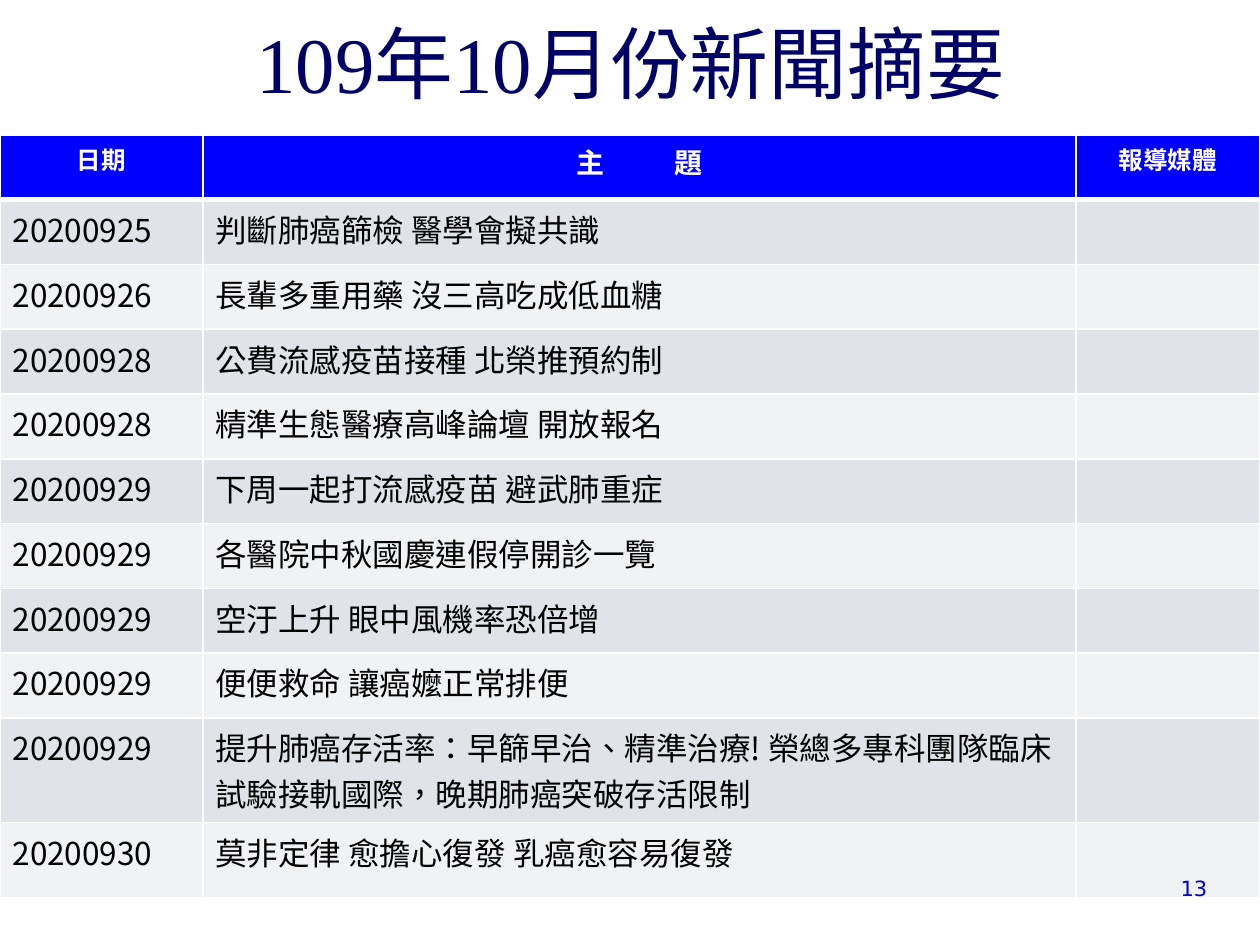
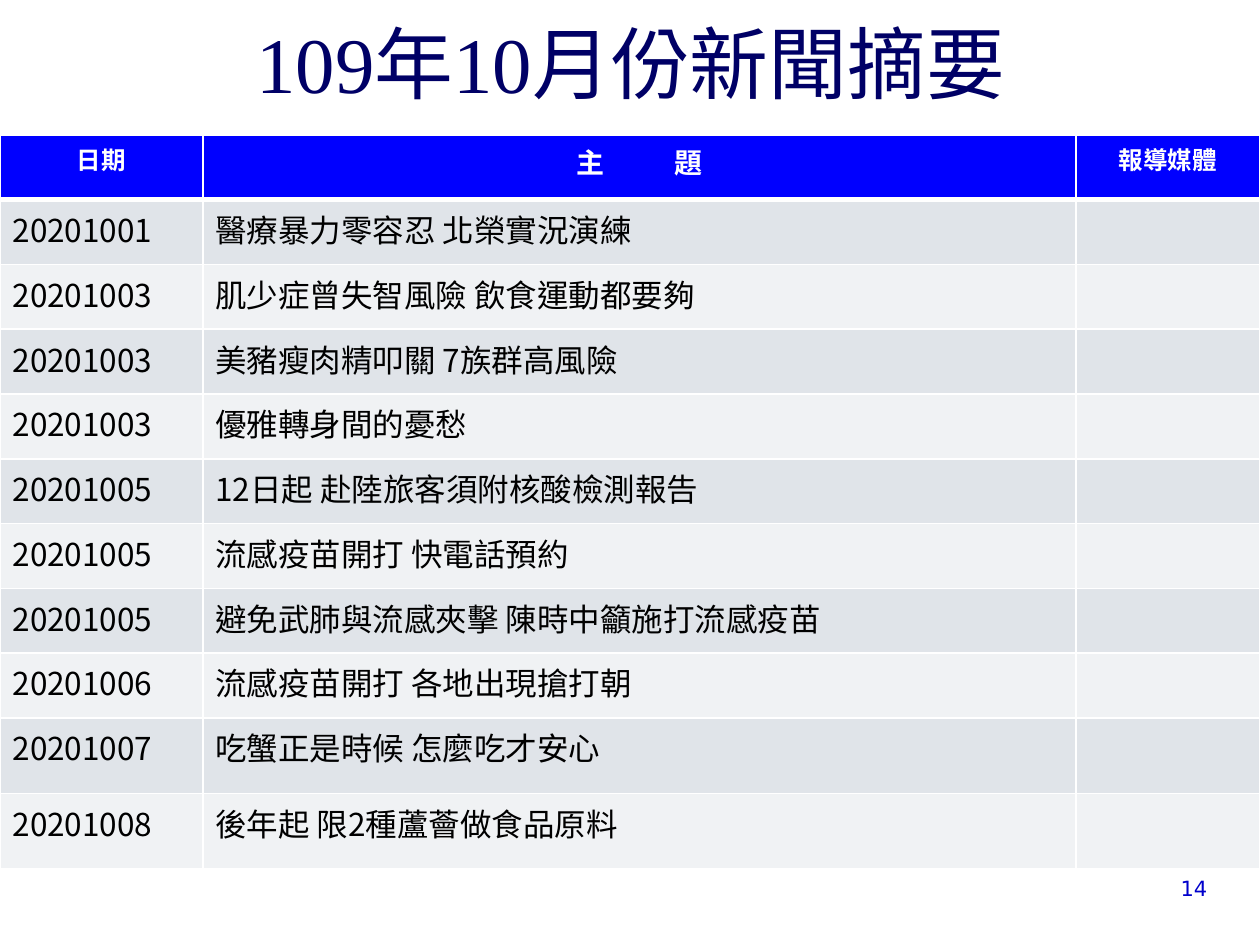
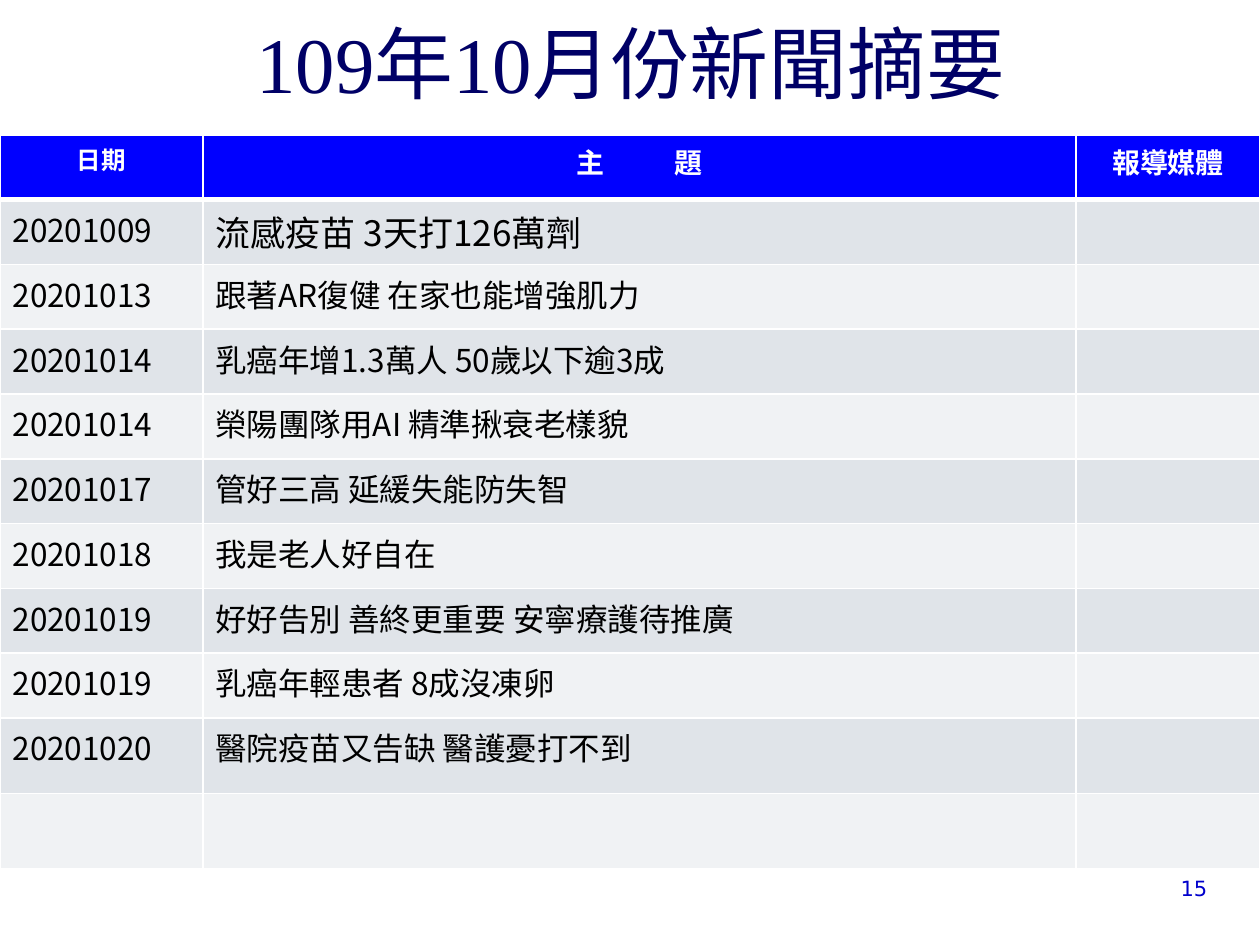
from lxml import etree
from pptx import Presentation
from pptx.dml.color import RGBColor
from pptx.enum.text import MSO_ANCHOR, PP_ALIGN
from pptx.oxml.ns import qn
from pptx.util import Inches, Pt

CENTER, LEFT, RIGHT = PP_ALIGN.CENTER, PP_ALIGN.LEFT, PP_ALIGN.RIGHT
BOTTOM, TOP = MSO_ANCHOR.BOTTOM, MSO_ANCHOR.TOP

COLORS = {
    "title": "000066",
    "header": "0000FF",
    "header_text": "FFFFFF",
    "band_dark": "E0E4E9",
    "band_light": "F0F2F4",
    "border": "FFFFFF",
    "text": "000000",
    "page_number": "0000CC",
}
TITLE_FONT = "Times New Roman"
TABLE_FONT = "Noto Sans CJK SC"
NUMBER_FONT = "DejaVu Sans"
LANGUAGE = "zh-TW"

TITLE = "109年10月份新聞摘要"
TITLE_BOX = (0.63, 0.34, 8.75, 0.58)
TABLE_BOX = (0, 1.07, 10, 5.83)
NUMBER_BOX = (8.94, 6.9, 0.74, 0.3)
COLUMN_WIDTHS = (1.61, 6.93, 1.46)
TALL_ROWS, TALL_HEIGHT = 2, 0.6
LINE_CAPACITY, TWO_LINE_HEIGHT = 26, 0.83
FIRST_PAGE = 13

# Each page: size of the media heading, size of the first headline, news items
PAGES = [
    (14, 18, [
        ("20200925", "判斷肺癌篩檢 醫學會擬共識"),
        ("20200926", "長輩多重用藥 沒三高吃成低血糖"),
        ("20200928", "公費流感疫苗接種 北榮推預約制"),
        ("20200928", "精準生態醫療高峰論壇 開放報名"),
        ("20200929", "下周一起打流感疫苗 避武肺重症"),
        ("20200929", "各醫院中秋國慶連假停開診一覽"),
        ("20200929", "空汙上升 眼中風機率恐倍增"),
        ("20200929", "便便救命 讓癌嬤正常排便"),
        ("20200929", "提升肺癌存活率：早篩早治、精準治療! "
                     "榮總多專科團隊臨床試驗接軌國際，晚期肺癌突破存活限制"),
        ("20200930", "莫非定律 愈擔心復發 乳癌愈容易復發"),
    ]),
    (14, 18, [
        ("20201001", "醫療暴力零容忍 北榮實況演練"),
        ("20201003", "肌少症曾失智風險 飲食運動都要夠"),
        ("20201003", "美豬瘦肉精叩關 7族群高風險"),
        ("20201003", "優雅轉身間的憂愁"),
        ("20201005", "12日起 赴陸旅客須附核酸檢測報告"),
        ("20201005", "流感疫苗開打 快電話預約"),
        ("20201005", "避免武肺與流感夾擊 陳時中籲施打流感疫苗"),
        ("20201006", "流感疫苗開打 各地出現搶打朝"),
        ("20201007", "吃蟹正是時候 怎麼吃才安心"),
        ("20201008", "後年起 限2種蘆薈做食品原料"),
    ]),
    (16, 20, [
        ("20201009", "流感疫苗 3天打126萬劑"),
        ("20201013", "跟著AR復健 在家也能增強肌力"),
        ("20201014", "乳癌年增1.3萬人 50歲以下逾3成"),
        ("20201014", "榮陽團隊用AI 精準揪衰老樣貌"),
        ("20201017", "管好三高 延緩失能防失智"),
        ("20201018", "我是老人好自在"),
        ("20201019", "好好告別 善終更重要 安寧療護待推廣"),
        ("20201019", "乳癌年輕患者 8成沒凍卵"),
        ("20201020", "醫院疫苗又告缺 醫護憂打不到"),
        ("", ""),
    ]),
]


def style_paragraph(paragraph, size, font_name, color, align=LEFT, bold=False):
    paragraph.alignment = align
    font = paragraph.font
    font.size, font.name, font.bold = Pt(size), font_name, bold
    font.color.rgb = RGBColor.from_string(COLORS[color])
    for run in paragraph.runs:
        run.font._element.set("lang", LANGUAGE)


def add_line(slide, box, text, size, font_name, color, align, anchor):
    """Place one line of text in a box."""
    frame = slide.shapes.add_textbox(*map(Inches, box)).text_frame
    frame.word_wrap = True
    frame.vertical_anchor = anchor
    paragraph = frame.paragraphs[0]
    paragraph.text = text
    style_paragraph(paragraph, size, font_name, color, align)


def set_borders(cell, bottom_width):
    properties = cell._tc.get_or_add_tcPr()
    widths = {"a:lnL": 1, "a:lnR": 1, "a:lnT": 1, "a:lnB": bottom_width}
    for side, width in widths.items():
        line = etree.SubElement(properties, qn(side), w=str(Pt(width)))
        fill = etree.SubElement(line, qn("a:solidFill"))
        etree.SubElement(fill, qn("a:srgbClr"), val=COLORS["border"])


def fill_cell(cell, text, size, background, color="text", align=LEFT,
              bold=False, bottom_width=1):
    set_borders(cell, bottom_width)
    cell.fill.solid()
    cell.fill.fore_color.rgb = RGBColor.from_string(COLORS[background])
    if text:
        paragraph = cell.text_frame.paragraphs[0]
        paragraph.text = text
        style_paragraph(paragraph, size, TABLE_FONT, color, align, bold)


def spread_heading(cell):
    """Widen the gap between the two characters of the heading."""
    paragraph = cell.text_frame.paragraphs[0]
    first, last = paragraph.text.split()
    paragraph.runs[0].text = first + " "
    paragraph.runs[0].font._element.set("spc", "1800")
    paragraph.add_run().text = last


def set_row_heights(table, table_height, news):
    """Share the height evenly, with taller last rows and two-line headlines."""
    normal_rows = len(news) + 1 - TALL_ROWS
    normal_height = (table_height - TALL_ROWS * TALL_HEIGHT) / normal_rows
    headlines = [""] + [headline for _, headline in news]
    for index, (row, headline) in enumerate(zip(table.rows, headlines)):
        if len(headline) > LINE_CAPACITY:
            row.height = Inches(TWO_LINE_HEIGHT)
        else:
            row.height = Inches(normal_height if index < normal_rows
                                else TALL_HEIGHT)


def add_news_table(slide, box, media_size, first_size, news):
    frame = slide.shapes.add_table(
        len(news) + 1, len(COLUMN_WIDTHS), *map(Inches, box))
    table = frame.table
    table.first_row = table.horz_banding = False

    # Column widths and row heights
    for column, width in zip(table.columns, COLUMN_WIDTHS):
        column.width = Inches(width)
    set_row_heights(table, box[3], news)
    frame.height = sum(row.height for row in table.rows)

    # Header row
    headings = (("日期", 14), ("主 題", 16), ("報導媒體", media_size))
    for column, (heading, size) in enumerate(headings):
        fill_cell(table.cell(0, column), heading, size, "header", "header_text",
                  CENTER, bold=True, bottom_width=3)
    spread_heading(table.cell(0, 1))

    # News rows
    for row, (date, headline) in enumerate(news, start=1):
        band = "band_dark" if row % 2 else "band_light"
        headline_size = first_size if row == 1 else 18
        fill_cell(table.cell(row, 0), date, 18, band)
        fill_cell(table.cell(row, 1), headline, headline_size, band)
        fill_cell(table.cell(row, 2), "", 18, band)


def add_news_slide(deck, number, media_size, first_size, news):
    slide = deck.slides.add_slide(deck.slide_layouts[6])
    add_line(slide, TITLE_BOX, TITLE, 45, TITLE_FONT, "title", CENTER, BOTTOM)
    add_news_table(slide, TABLE_BOX, media_size, first_size, news)
    add_line(slide, NUMBER_BOX, str(number), 12, NUMBER_FONT, "page_number",
             RIGHT, TOP)


def main():
    deck = Presentation()
    deck.slide_width, deck.slide_height = Inches(10), Inches(7.5)
    for number, page in enumerate(PAGES, start=FIRST_PAGE):
        add_news_slide(deck, number, *page)
    deck.save("out.pptx")


if __name__ == "__main__":
    main()
